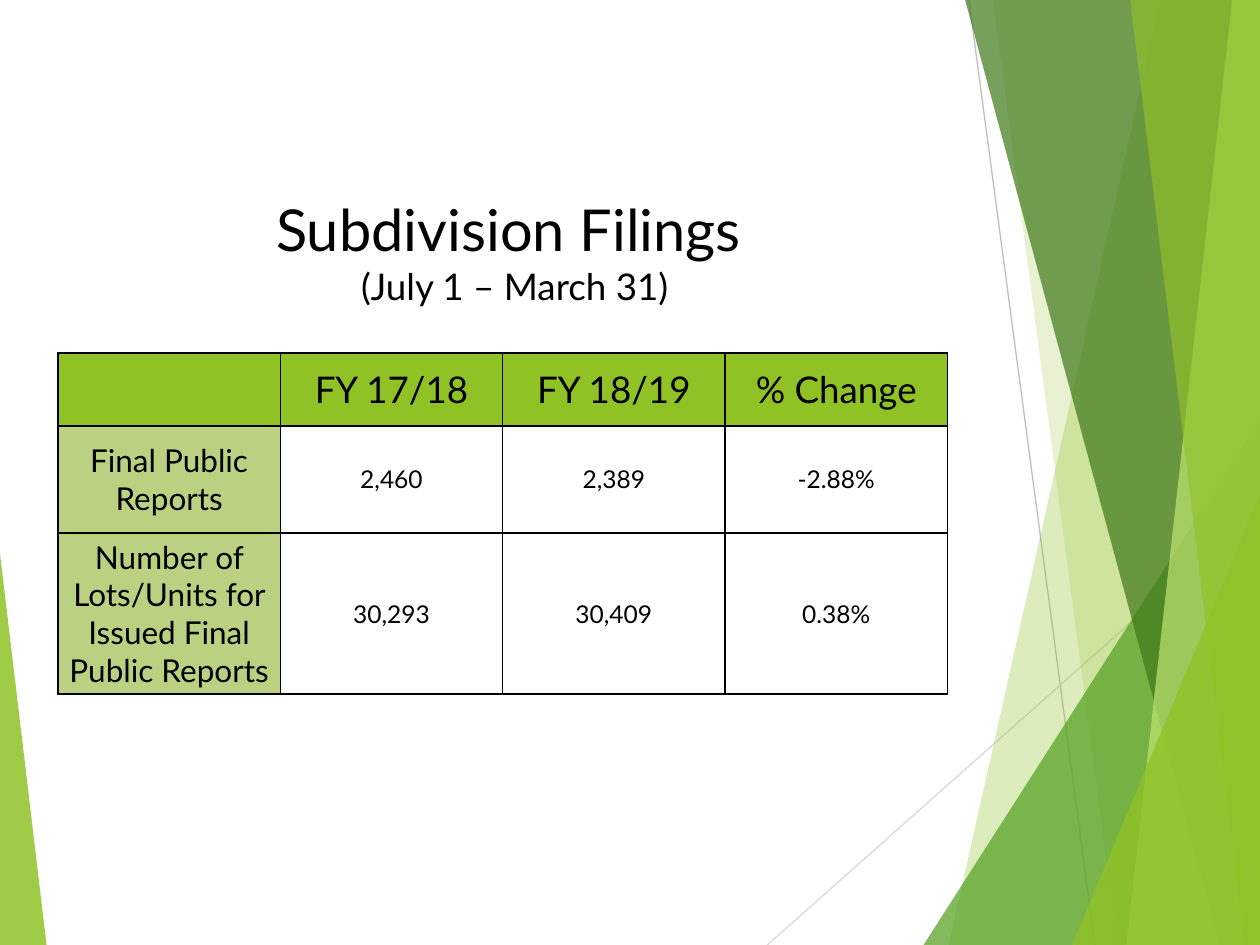
from dataclasses import dataclass

from lxml import etree
from pptx import Presentation
from pptx.dml.color import RGBColor
from pptx.enum.shapes import MSO_CONNECTOR, MSO_SHAPE
from pptx.enum.text import MSO_ANCHOR, PP_ALIGN
from pptx.oxml.ns import qn
from pptx.util import Inches, Pt

STRAIGHT = MSO_CONNECTOR.STRAIGHT
TRIANGLE = MSO_SHAPE.ISOSCELES_TRIANGLE
MIDDLE = MSO_ANCHOR.MIDDLE
CENTER = PP_ALIGN.CENTER
COLUMNS, ROWS = 10, 7.5


@dataclass(frozen=True)
class Theme:
    font: str = "Lato"
    ink: str = "000000"
    lime: str = "90C226"
    pale_lime: str = "C0E474"
    leaf: str = "54A021"
    forest: str = "3F7819"
    label_fill: str = "B9D181"
    steep_line: str = "BFBFBF"
    shallow_line: str = "D9D9D9"
    hairline: float = 0.75
    border: float = 1
    title: int = 33
    gap: int = 27
    subtitle: int = 21
    heading: int = 21
    label: int = 18
    figure: int = 14


THEME = Theme()


@dataclass(frozen=True)
class Box:
    left: float
    top: float
    width: float
    height: float
    unit: int

    def region(self, column, row, columns, rows):
        return Box(self.left + column, self.top + row, columns, rows, self.unit)

    def point(self, column, row):
        return (round((self.left + column) * self.unit),
                round((self.top + row) * self.unit))

    def frame(self):
        return (*self.point(0, 0), round(self.width * self.unit), round(self.height * self.unit))


def paint(shape, color, opacity):
    shape.shadow.inherit = False
    shape.line.fill.background()
    shape.fill.solid()
    shape.fill.fore_color.rgb = RGBColor.from_string(color)
    tint = shape._element.spPr.find(qn("a:solidFill"))[0]
    etree.SubElement(tint, qn("a:alpha"), val=str(opacity * 1000))


def add_ray(slide, box, start, end, color):
    ray = slide.shapes.add_connector(STRAIGHT, *box.point(*start), *box.point(*end))
    ray.line.color.rgb = RGBColor.from_string(color)
    ray.line.width = Pt(THEME.hairline)
    etree.SubElement(ray._element.spPr, qn("a:effectLst"))


def add_facet(slide, box, top_column, bottom_column, color, opacity):
    outline = slide.shapes.build_freeform(*box.point(top_column, 0))
    outline.add_line_segments([
        box.point(box.width, 0),
        box.point(box.width, box.height),
        box.point(bottom_column, box.height),
    ])
    paint(outline.convert_to_shape(), color, opacity)


def add_wedge(slide, box, apex, color, opacity):
    wedge = slide.shapes.add_shape(TRIANGLE, *box.frame())
    wedge.adjustments[0] = apex
    paint(wedge, color, opacity)


def add_right_wedge(slide, box, columns, rows, color, opacity):
    corner = box.region(box.width - columns, box.height - rows, columns, rows)
    add_wedge(slide, corner, 1, color, opacity)


def add_backdrop(slide, box):
    add_ray(slide, box, (7.69, 0), (8.69, box.height), THEME.steep_line)
    add_ray(slide, box, (box.width, 4.03), (6.09, box.height), THEME.shallow_line)
    add_facet(slide, box, 9.21, 7.53, THEME.lime, 30)
    add_facet(slide, box, 7.88, 8.87, THEME.lime, 20)
    add_right_wedge(slide, box, 2.67, 4.17, THEME.leaf, 72)
    for top_column, bottom_column, color, opacity in (
        (7.66, 9.68, THEME.forest, 70),
        (9.78, 8.94, THEME.pale_lime, 70),
        (8.97, 9.88, THEME.lime, 65),
    ):
        add_facet(slide, box, top_column, bottom_column, color, opacity)
    add_right_wedge(slide, box, 1.49, 3.57, THEME.lime, 80)
    add_wedge(slide, box.region(0, box.height - 3.11, 0.37, 3.11), 0, THEME.lime, 85)


def style_font(font, size):
    font.name = THEME.font
    font.size = Pt(size)
    font.color.rgb = RGBColor.from_string(THEME.ink)


def add_title(slide, box):
    frame = slide.shapes.add_textbox(*box.frame()).text_frame
    frame.word_wrap = True
    frame.vertical_anchor = MIDDLE
    heading = frame.paragraphs[0]
    heading.alignment = CENTER

    def add_run(text, size):
        run = heading.add_run()
        run.text = text
        style_font(run.font, size)

    add_run("Subdivision Filings", THEME.title)
    add_run(" ", THEME.gap)
    heading.add_line_break()
    add_run("(July 1 – March 31)", THEME.subtitle)


def add_borders(cell):
    properties = cell._tc.get_or_add_tcPr()
    for position, side in enumerate(("a:lnL", "a:lnR", "a:lnT", "a:lnB")):
        edge = etree.Element(qn(side), w=str(Pt(THEME.border)))
        ink = etree.SubElement(edge, qn("a:solidFill"))
        etree.SubElement(ink, qn("a:srgbClr"), val=THEME.ink)
        properties.insert(position, edge)


def fill_cell(cell, text, size, color):
    cell.vertical_anchor = MIDDLE
    cell.margin_left = cell.margin_right = Inches(0.07)
    cell.margin_top = cell.margin_bottom = Inches(0.04)
    if color:
        cell.fill.solid()
        cell.fill.fore_color.rgb = RGBColor.from_string(color)
    else:
        cell.fill.background()
    cell.text = text
    paragraph = cell.text_frame.paragraphs[0]
    paragraph.alignment = CENTER
    style_font(paragraph.font, size)
    add_borders(cell)


def add_filings_table(slide, box):
    filings = (
        ("", "FY 17/18", "FY 18/19", "% Change"),
        ("Final Public Reports", "2,460", "2,389", "-2.88%"),
        ("Number of Lots/Units for Issued Final Public Reports", "30,293", "30,409", "0.38%"),
    )
    row_heights = (0.58, 0.85, 1.27)
    table = slide.shapes.add_table(len(filings), len(filings[0]), *box.frame()).table
    table.first_row = table.horz_banding = False
    for row, height in zip(table.rows, row_heights):
        row.height = round(height * box.unit)
    for row_number, entries in enumerate(filings):
        for column_number, entry in enumerate(entries):
            if row_number == 0:
                size, color = THEME.heading, THEME.lime
            elif column_number == 0:
                size, color = THEME.label, THEME.label_fill
            else:
                size, color = THEME.figure, None
            fill_cell(table.cell(row_number, column_number), entry, size, color)


def main():
    deck = Presentation()
    deck.slide_width, deck.slide_height = Inches(10), Inches(7.5)
    slide = deck.slides.add_slide(deck.slide_layouts[6])
    page = Box(0, 0, COLUMNS, ROWS, deck.slide_width // COLUMNS)
    add_backdrop(slide, page)
    add_title(slide, page.region(0.56, 1.45, 7.05, 1.08))
    add_filings_table(slide, page.region(0.46, 2.8, 7.06, 2.7))
    deck.save("out.pptx")


if __name__ == "__main__":
    main()
